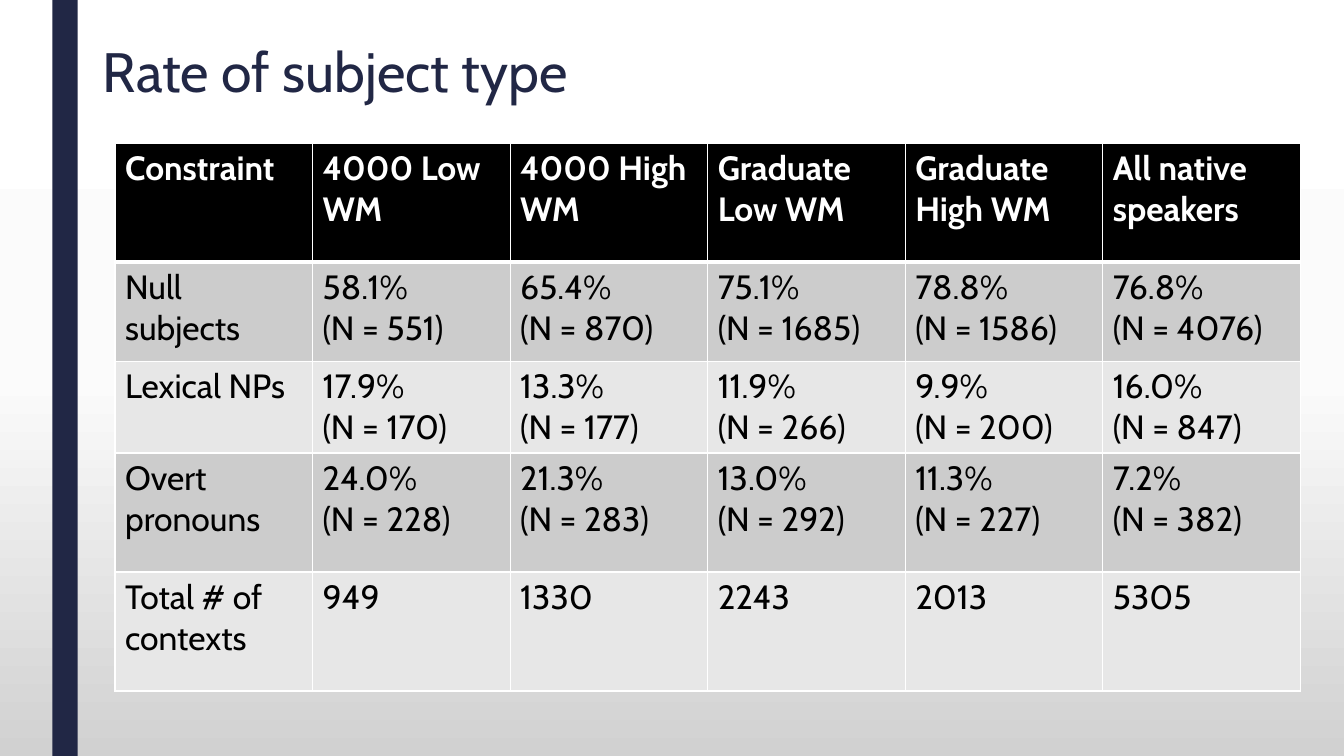
from copy import deepcopy

from lxml import etree
from pptx import Presentation
from pptx.dml.color import RGBColor
from pptx.enum.shapes import MSO_SHAPE
from pptx.enum.text import MSO_ANCHOR, MSO_AUTO_SIZE, PP_ALIGN
from pptx.oxml.ns import qn
from pptx.util import Cm, Pt

RECT = MSO_SHAPE.RECTANGLE
MIDDLE = MSO_ANCHOR.MIDDLE
NO_FIT = MSO_AUTO_SIZE.NONE
LEFT = PP_ALIGN.LEFT

FONT = "Cabin"
COLORS = {
    "navy": "212745",
    "white": "FFFFFF",
    "black": "000000",
    "dark_band": "CCCCCC",
    "light_band": "E7E7E7",
}
BACKGROUND = [(0, "FFFFFF"), (0.5, "FBFBFB"), (1, "D1D1D1")]
ROW_HEIGHTS = [3, 2.49, 2.31, 3, 3]
ROWS = [
    ["Constraint", "4000 Low WM", "4000 High WM", "Graduate Low WM",
     "Graduate High WM", "All native speakers"],
    ["Null subjects", "58.1%\n(N = 551)", "65.4%\n(N = 870)",
     "75.1%\n(N = 1685)", "78.8%\n(N = 1586)", "76.8%\n(N = 4076)"],
    ["Lexical NPs", "17.9%\n(N = 170)", "13.3%\n(N = 177)",
     "11.9%\n(N = 266)", "9.9%\n(N = 200)", "16.0%\n(N = 847)"],
    ["Overt pronouns", "24.0%\n(N = 228)", "21.3%\n(N = 283)",
     "13.0%\n(N = 292)", "11.3%\n(N = 227)", "7.2%\n(N = 382)"],
    ["Total # of contexts", "949", "1330", "2243", "2013", "5305"],
]


def rgb(name):
    return RGBColor.from_string(COLORS[name])


def style_text(tf, size, color, bold=False):
    for p in tf.paragraphs:
        p.alignment = LEFT
        for r in p.runs:
            r.font.name = FONT
            r.font.size = Pt(size)
            r.font.bold = bold
            r.font.color.rgb = rgb(color)


def set_border(cell, side, width):
    tc_pr = cell._tc.get_or_add_tcPr()
    ln = etree.SubElement(tc_pr, qn(f"a:ln{side}"), w=str(Pt(width)))
    fill = etree.SubElement(ln, qn("a:solidFill"))
    etree.SubElement(fill, qn("a:srgbClr"), val=COLORS["white"])


def add_background(slide):
    fill = slide.background.fill
    fill.gradient()
    fill.gradient_angle = 270
    stops = next(slide.element.iter(qn("a:gsLst")))
    stops.append(deepcopy(stops[-1]))
    for stop, (position, color) in zip(fill.gradient_stops, BACKGROUND):
        stop.position = position
        stop.color.rgb = RGBColor.from_string(color)


def add_side_bar(slide, left, top, width, height):
    sp = slide.shapes.add_shape(RECT, left, top, width, height)
    sp.shadow.inherit = False
    sp.fill.solid()
    sp.fill.fore_color.rgb = rgb("navy")
    sp.line.fill.background()


def add_title(slide, left, top, width, height):
    sp = slide.shapes.title
    sp.left, sp.top, sp.width, sp.height = left, top, width, height
    tf = sp.text_frame
    tf.text = "Rate of subject type"
    tf.word_wrap = True
    tf.auto_size = NO_FIT
    tf.vertical_anchor = MIDDLE
    tf.paragraphs[0].line_spacing = 0.89
    style_text(tf, 39.6, "navy")


def add_rate_table(slide, left, top, width, height):
    frame = slide.shapes.add_table(len(ROWS), len(ROWS[0]), left, top, width, height)
    table = frame.table
    for column in table.columns:
        column.width = width // len(ROWS[0])
    for i, texts in enumerate(ROWS):
        table.rows[i].height = int(height * ROW_HEIGHTS[i] / sum(ROW_HEIGHTS))
        header = i == 0
        band = "black" if header else "dark_band" if i % 2 else "light_band"
        for j, text in enumerate(texts):
            cell = table.cell(i, j)
            cell.text_frame.text = text
            style_text(cell.text_frame, 24, "white" if header else "black", header)
            for side in "LRTB":
                thick = (header and side == "B") or (i == 1 and side == "T")
                set_border(cell, side, 3 if thick else 1)
            cell.fill.solid()
            cell.fill.fore_color.rgb = rgb(band)


def main():
    prs = Presentation()
    prs.slide_width, prs.slide_height = Cm(33.87), Cm(19.05)
    slide = prs.slides.add_slide(prs.slide_layouts[5])
    add_background(slide)
    add_side_bar(slide, Cm(1.32), 0, Cm(0.64), prs.slide_height)
    add_title(slide, Cm(2.34), Cm(1.02), Cm(29.21), Cm(1.75))
    add_rate_table(slide, Cm(2.9), Cm(3.61), Cm(29.87), Cm(sum(ROW_HEIGHTS)))
    prs.save("out.pptx")


if __name__ == "__main__":
    main()
